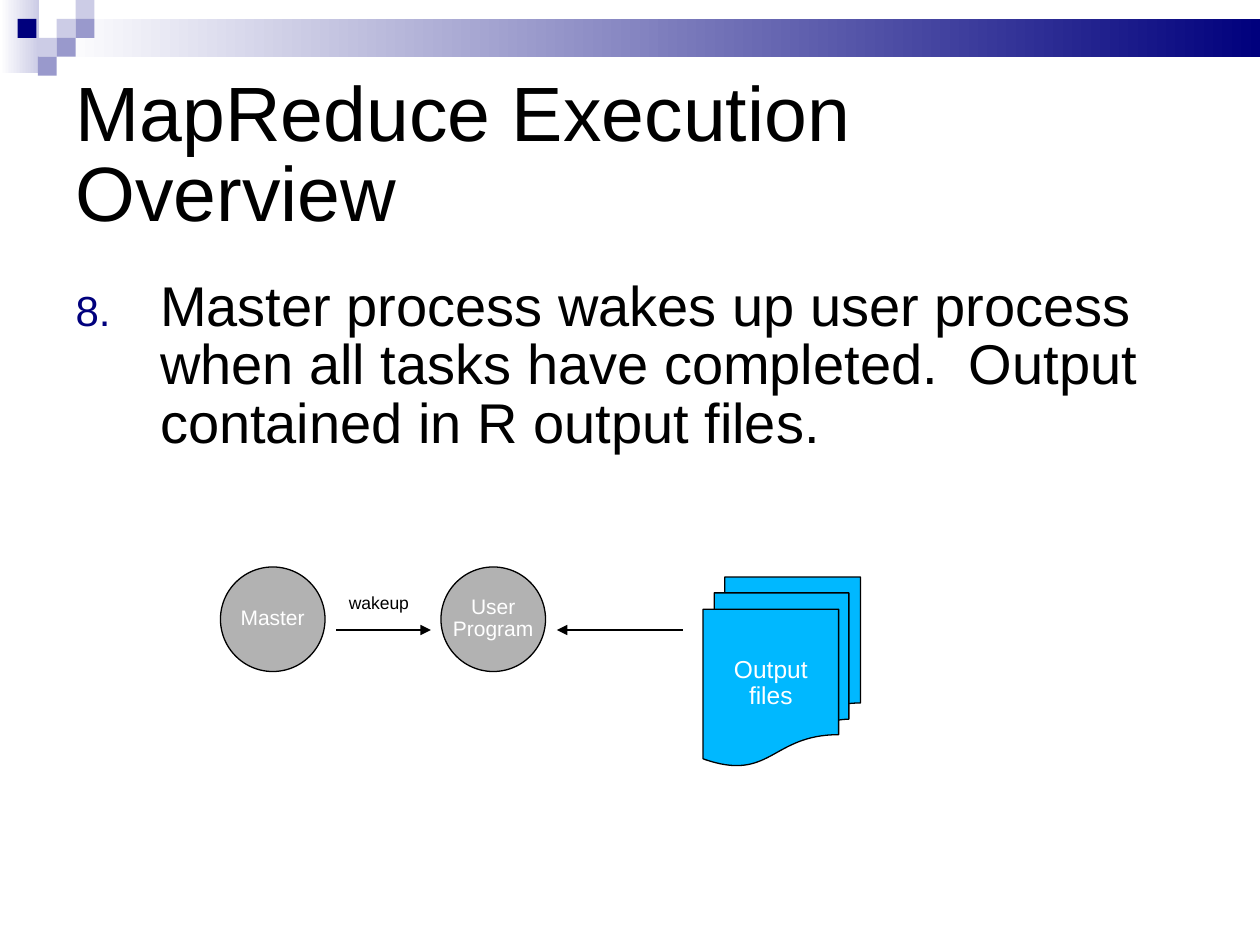
"""Builds the MapReduce execution overview slide, step 8."""
from lxml import etree
from pptx import Presentation
from pptx import util as u
from pptx.dml.color import RGBColor
from pptx.enum import shapes, text
from pptx.oxml import ns

NAVY = RGBColor(0x00, 0x00, 0x7D)
PERIWINKLE = RGBColor(0x99, 0x99, 0xCC)
LAVENDER = RGBColor(0xCC, 0xCC, 0xE6)
GRAY = RGBColor(0xB2, 0xB2, 0xB2)
CYAN = RGBColor(0x00, 0xB8, 0xFF)
BLACK = RGBColor(0x00, 0x00, 0x00)
WHITE = RGBColor(0xFF, 0xFF, 0xFF)


class Board:
    """Holds the style and the current slide."""

    font = "Arial"
    spacing = 0.87
    line_width = u.Pt(0.75)

    def __init__(self, slide):
        self.slide = slide

    def place(self, box, left, top, width, height):
        box.left, box.top = u.Inches(left), u.Inches(top)
        box.width, box.height = u.Inches(width), u.Inches(height)

    def add_lines(self, frame, lines, size, color, align, before=0):
        for number, line in enumerate(lines):
            paragraph = frame.add_paragraph() if number else frame.paragraphs[0]
            paragraph.alignment = align
            paragraph.line_spacing = self.spacing
            paragraph.space_before = u.Pt(before)
            run = paragraph.add_run()
            run.text = line
            run.font.name, run.font.size = self.font, u.Pt(size)
            run.font.color.rgb = color

    def block(self, left, top, width, height, color, fade=False):
        tile = self.slide.shapes.add_shape(
            shapes.MSO_SHAPE.RECTANGLE, *map(u.Inches, (left, top, width, height)))
        tile.shadow.inherit = False
        tile.line.fill.background()
        if fade:
            tile.fill.gradient()
            tile.fill.gradient_angle = 180
            for stop, shade, position in zip(tile.fill.gradient_stops, (color, WHITE), (0, 1)):
                stop.color.rgb, stop.position = shade, position
        else:
            tile.fill.solid()
            tile.fill.fore_color.rgb = color

    def title(self, wording, *area):
        heading = self.slide.shapes.title
        self.place(heading, *area)
        frame = heading.text_frame
        frame.auto_size = text.MSO_AUTO_SIZE.NONE
        frame.vertical_anchor = text.MSO_ANCHOR.MIDDLE
        self.add_lines(frame, [wording], 44, BLACK, text.PP_ALIGN.LEFT)

    def numbered(self, wording, start, *area):
        body = self.slide.placeholders[1]
        self.place(body, *area)
        frame = body.text_frame
        frame.auto_size = text.MSO_AUTO_SIZE.NONE
        self.add_lines(frame, [wording], 32, BLACK, text.PP_ALIGN.LEFT, before=8)
        properties = frame.paragraphs[0]._p.get_or_add_pPr()
        indent = u.Inches(0.67)
        properties.set("marL", str(indent))
        properties.set("indent", str(-indent))
        tint = etree.SubElement(properties, ns.qn("a:buClr"))
        etree.SubElement(tint, ns.qn("a:srgbClr"), val=str(NAVY))
        etree.SubElement(properties, ns.qn("a:buSzPct"), val="75000")
        etree.SubElement(properties, ns.qn("a:buFont"), typeface=self.font)
        etree.SubElement(properties, ns.qn("a:buAutoNum"), type="arabicPeriod", startAt=str(start))

    def label(self, wording, *area):
        caption = self.slide.shapes.add_textbox(*map(u.Inches, area))
        frame = caption.text_frame
        frame.word_wrap = True
        frame.auto_size = text.MSO_AUTO_SIZE.SHAPE_TO_FIT_TEXT
        self.add_lines(frame, [wording], 10, BLACK, text.PP_ALIGN.LEFT, before=5)

    def node(self, kind, lines, size, color, *area):
        part = self.slide.shapes.add_shape(kind, *map(u.Inches, area))
        part.shadow.inherit = False
        part.fill.solid()
        part.fill.fore_color.rgb = color
        part.line.color.rgb, part.line.width = BLACK, self.line_width
        frame = part.text_frame
        frame.word_wrap = False
        frame.vertical_anchor = text.MSO_ANCHOR.MIDDLE
        self.add_lines(frame, lines, size, WHITE, text.PP_ALIGN.CENTER)

    def arrow(self, start, end, level):
        link = self.slide.shapes.add_connector(
            shapes.MSO_CONNECTOR.STRAIGHT, *map(u.Inches, (start, level, end, level)))
        link.line.color.rgb, link.line.width = BLACK, self.line_width
        etree.SubElement(link.line._get_or_add_ln(), ns.qn("a:tailEnd"), type="triangle")
        etree.SubElement(link._element.spPr, ns.qn("a:effectLst"))


def main():
    deck = Presentation()
    deck.slide_width, deck.slide_height = u.Inches(10), u.Inches(7.5)
    board = Board(deck.slides.add_slide(deck.slide_layouts[1]))

    board.block(0, 0, 0.31, 0.58, LAVENDER, fade=True)
    board.block(0.45, 0.15, 9.55, 0.3, NAVY, fade=True)
    unit = 0.15
    mosaic = [(3, 1, LAVENDER), (4, 0, LAVENDER), (4, 1, PERIWINKLE), (2, 2, LAVENDER),
              (0.93, 1, NAVY), (3, 2, PERIWINKLE), (2, 3, PERIWINKLE)]
    for column, row, color in mosaic:
        board.block(column * unit, row * unit, unit, unit, color)

    board.title("MapReduce Execution Overview", 0.5, 0.5, 9, 1.5)
    board.numbered("Master process wakes up user process when all tasks have completed.  "
                   "Output contained in R output files.", 8, 0.5, 2.17, 9, 4.25)

    board.label("wakeup", 2.67, 4.67, 0.75, 0.25)
    board.arrow(2.67, 3.42, 5)
    for left, lines in ((3.5, ["User", "Program"]), (1.75, ["Master"])):
        board.node(shapes.MSO_SHAPE.OVAL, lines, 12, GRAY, left, 4.5, 0.83, 0.83)
    board.node(shapes.MSO_SHAPE.FLOWCHART_MULTIDOCUMENT, ["Output", "files"], 14, CYAN,
               5.58, 4.58, 1.25, 1.5)
    board.arrow(5.42, 4.42, 5)

    deck.save("out.pptx")


if __name__ == "__main__":
    main()
